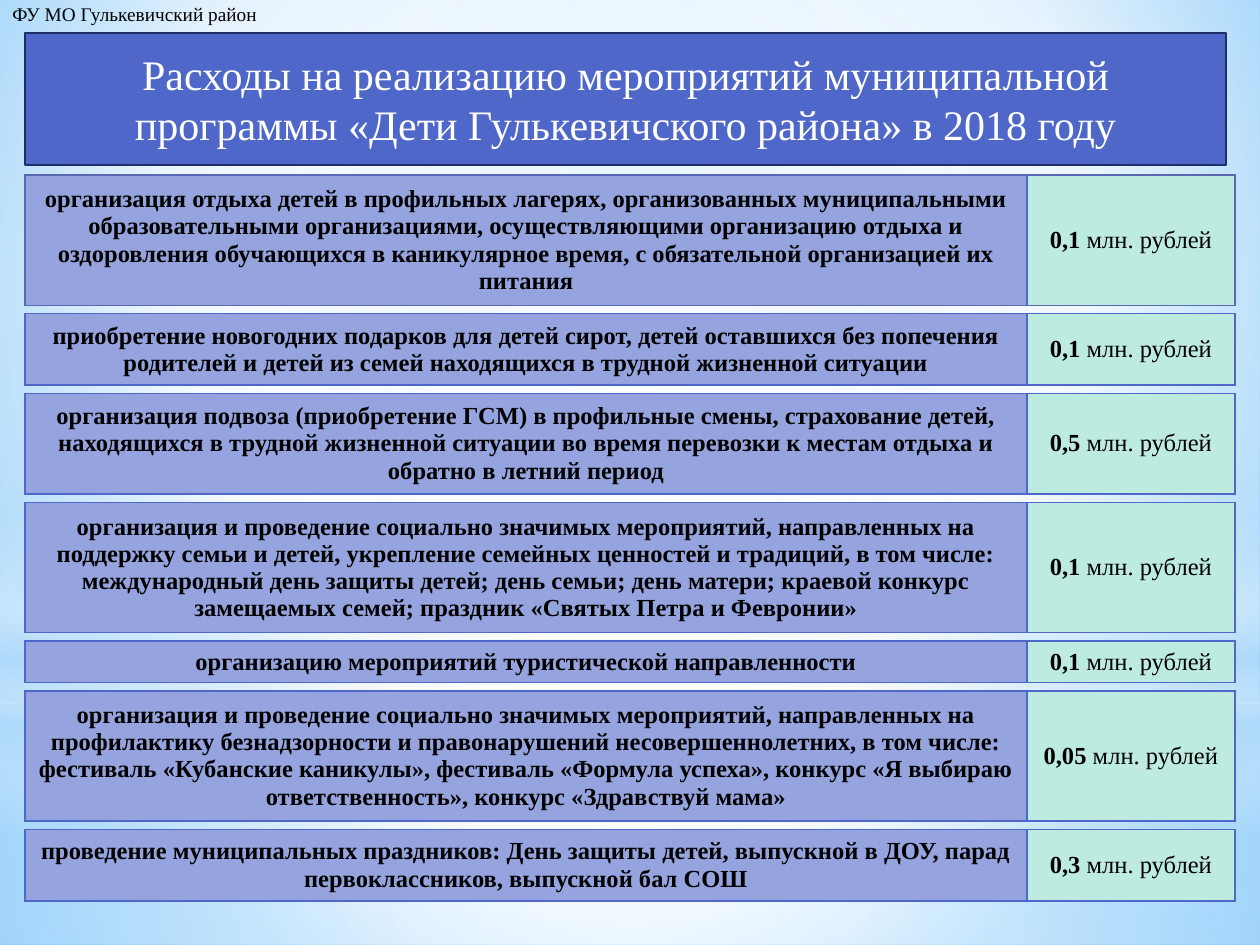
"""Build the slide on 2018 spending under the district's children programme."""
from dataclasses import dataclass
from typing import Any

from pptx import Presentation
from pptx.dml.color import RGBColor
from pptx.enum.shapes import MSO_SHAPE
from pptx.enum.text import MSO_ANCHOR, MSO_AUTO_SIZE, PP_ALIGN
from pptx.oxml import parse_xml
from pptx.oxml.ns import nsdecls, qn
from pptx.util import Inches, Pt


@dataclass(frozen=True)
class Theme:
    font: str = "Times New Roman"
    ink: str = "000000"
    white: str = "FFFFFF"
    blue: str = "4E67C8"
    navy: str = "1F2E69"
    slate: str = "5968B0"
    lavender: str = "95A4DE"
    mint: str = "BEEBDF"
    sky: str = "B4DCFA"
    label_pt: float = 11
    body_pt: float = 14
    title_pt: float = 24


@dataclass(frozen=True)
class Gradient:
    stops: tuple[tuple[int, str, int], ...]
    focus: tuple[int, int, int, int] | None = (50, 50, 50, 50)


@dataclass(frozen=True)
class Glow:
    kind: MSO_SHAPE
    top: float
    height: float
    gradient: Gradient


@dataclass(frozen=True)
class Expense:
    purpose: str
    amount: str
    lines: int
    edge: str = Theme.blue

    @property
    def height(self) -> float:
        return 0.1 + self.lines * T.body_pt * 1.2 / 72


T = Theme()
LEFT, TOP, BOTTOM = 0.2, 1.39, 7.15
COLS = (7.95, 1.65)
BACKDROP = Gradient(((0, "9ED5FF", 100), (60, T.white, 100), (100, "5BB9FF", 100)), (20, 10, 20, 60))
GLOWS = (
    Glow(MSO_SHAPE.RECTANGLE, 5.58, 1.92,
         Gradient(((0, T.white, 91), (37, T.white, 76), (100, T.sky, 79)))),
    Glow(MSO_SHAPE.RECTANGLE, 0, 5.58,
         Gradient(((0, T.white, 89), (48, T.white, 62), (100, T.sky, 79)))),
    Glow(MSO_SHAPE.RECTANGLE, 4.12, 2.5,
         Gradient(((0, T.white, 0), (29, T.white, 30), (45, T.sky, 40),
                   (55, T.white, 26), (65, T.sky, 60), (100, T.white, 0)), None)),
    Glow(MSO_SHAPE.OVAL, 1.75, 5.58, Gradient(((0, T.white, 100), (56, T.white, 0)))),
)
EXPENSES = (
    Expense("организация отдыха детей в профильных лагерях, организованных муниципальными "
            "образовательными организациями, осуществляющими организацию отдыха и оздоровления "
            "обучающихся в каникулярное время, с обязательной организацией их питания",
            "0,1", 4, T.slate),
    Expense("приобретение новогодних подарков для детей сирот, детей оставшихся без попечения "
            "родителей и детей из семей находящихся в трудной жизненной ситуации", "0,1", 2),
    Expense("организация подвоза (приобретение ГСМ) в профильные смены, страхование детей, "
            "находящихся в трудной жизненной ситуации во время перевозки к местам отдыха и "
            "обратно в летний период", "0,5", 3),
    Expense("организация и проведение социально значимых мероприятий, направленных на поддержку "
            "семьи и детей, укрепление семейных ценностей и традиций, в том числе: международный "
            "день защиты детей; день семьи; день матери; краевой конкурс замещаемых семей; "
            "праздник «Святых Петра и Февронии»", "0,1", 4),
    Expense("организацию мероприятий туристической направленности", "0,1", 1),
    Expense("организация и проведение социально значимых мероприятий, направленных на "
            "профилактику безнадзорности и правонарушений несовершеннолетних, в том числе: "
            "фестиваль «Кубанские каникулы», фестиваль «Формула успеха», конкурс «Я выбираю "
            "ответственность», конкурс «Здравствуй мама»", "0,05", 4),
    Expense("проведение муниципальных праздников: День защиты детей, выпускной в ДОУ, парад "
            "первоклассников, выпускной бал СОШ", "0,3", 2),
)


def set_attrs(obj: Any, values: dict[str, Any]) -> None:
    """Set each named attribute on the object."""
    for name, value in values.items():
        setattr(obj, name, value)


def set_gradient(pr: Any, g: Gradient) -> None:
    """Swap the solid fill of a property element for a gradient."""
    stops = "".join(
        f'<a:gs pos="{pos * 1000}"><a:srgbClr val="{color}"><a:alpha val="{alpha * 1000}"/>'
        f"</a:srgbClr></a:gs>" for pos, color, alpha in g.stops)
    shade = '<a:lin ang="5400000" scaled="0"/>'
    if g.focus:
        sides = " ".join(f'{k}="{v * 1000}"' for k, v in zip("ltrb", g.focus))
        shade = f'<a:path path="circle"><a:fillToRect {sides}/></a:path>'
    fill = parse_xml(f'<a:gradFill {nsdecls("a")} rotWithShape="1"><a:gsLst>{stops}</a:gsLst>'
                     f"{shade}</a:gradFill>")
    pr.replace(pr.find(qn("a:solidFill")), fill)


def add_glow(s: Any, glow: Glow) -> None:
    """Add a full-width translucent gradient shape."""
    sp = s.shapes.add_shape(glow.kind, 0, Inches(glow.top), Inches(10), Inches(glow.height))
    sp.shadow.inherit = False
    sp.fill.solid()
    set_gradient(sp._element.spPr, glow.gradient)
    sp.line.fill.background()


def write(p: Any, runs: tuple[tuple[str, bool], ...], size: float, color: str,
          align: PP_ALIGN = PP_ALIGN.CENTER) -> None:
    """Fill a paragraph with runs given as text and boldness."""
    p.alignment = align
    for text, bold in runs:
        r = p.add_run()
        r.text = text
        set_attrs(r.font, {"name": T.font, "size": Pt(size), "bold": bold})
        r.font.color.rgb = RGBColor.from_string(color)


def set_borders(cell: Any, colors: dict[str, str]) -> None:
    """Draw one-point borders in the given colour for each side."""
    tc_pr = cell._tc.get_or_add_tcPr()
    for i, side in enumerate("LRTB"):
        tc_pr.insert(i, parse_xml(
            f'<a:ln{side} {nsdecls("a")} w="12700"><a:solidFill><a:srgbClr val="{colors[side]}"/>'
            f"</a:solidFill></a:ln{side}>"))


def add_expense(s: Any, e: Expense, top: float) -> None:
    """Add a one-row table with a purpose and its amount."""
    tbl = s.shapes.add_table(1, 2, Inches(LEFT), Inches(top), Inches(sum(COLS)),
                             Inches(e.height)).table
    set_attrs(tbl, {"first_row": False, "horz_banding": False})
    cells = (
        (((e.purpose, True),), T.lavender, "R"),
        (((e.amount, True), (" млн. рублей", False)), T.mint, "L"),
    )
    for i, (runs, fill, inner) in enumerate(cells):
        tbl.columns[i].width = Inches(COLS[i])
        cell = tbl.cell(0, i)
        cell.vertical_anchor = MSO_ANCHOR.MIDDLE
        cell.fill.solid()
        cell.fill.fore_color.rgb = RGBColor.from_string(fill)
        set_borders(cell, {**dict.fromkeys("LRTB", e.edge), inner: T.blue})
        write(cell.text_frame.paragraphs[0], runs, T.body_pt, T.ink)


def format_title(s: Any, text: str) -> None:
    """Turn the title placeholder into a rounded banner above the glows."""
    sp = s.shapes.title
    s.shapes._spTree.append(sp._element)
    set_attrs(sp, {"left": Inches(LEFT), "top": Inches(0.26),
                   "width": Inches(9.53), "height": Inches(1.05)})
    sp._element.spPr.find(qn("a:xfrm")).addnext(parse_xml(
        f'<a:prstGeom {nsdecls("a")} prst="roundRect"><a:avLst/></a:prstGeom>'))
    sp.fill.solid()
    sp.fill.fore_color.rgb = RGBColor.from_string(T.blue)
    sp.line.color.rgb = RGBColor.from_string(T.navy)
    sp.line.width = Pt(1.25)
    tf = sp.text_frame
    set_attrs(tf, {"word_wrap": True, "auto_size": MSO_AUTO_SIZE.NONE,
                   "vertical_anchor": MSO_ANCHOR.MIDDLE})
    write(tf.paragraphs[0], ((text, False),), T.title_pt, T.white)


def add_label(s: Any, text: str) -> None:
    """Add the issuer's name in the top left corner."""
    tf = s.shapes.add_textbox(0, Inches(-0.03), Inches(2.18), Inches(0.29)).text_frame
    set_attrs(tf, {"word_wrap": False, "auto_size": MSO_AUTO_SIZE.SHAPE_TO_FIT_TEXT})
    write(tf.paragraphs[0], ((text, False),), T.label_pt, T.ink, PP_ALIGN.LEFT)


def main() -> None:
    """Assemble and save the slide."""
    prs = Presentation()
    set_attrs(prs, {"slide_width": Inches(10), "slide_height": Inches(7.5)})
    s = prs.slides.add_slide(prs.slide_layouts[5])
    s.background.fill.solid()
    set_gradient(s._element.find(f'.//{qn("p:bgPr")}'), BACKDROP)
    for glow in GLOWS:
        add_glow(s, glow)
    add_label(s, "ФУ МО Гулькевичский район")
    format_title(s, "Расходы на реализацию мероприятий муниципальной программы "
                    "«Дети Гулькевичского района» в 2018 году")
    gap = (BOTTOM - TOP - sum(e.height for e in EXPENSES)) / (len(EXPENSES) - 1)
    top = TOP
    for e in EXPENSES:
        add_expense(s, e, top)
        top += e.height + gap
    prs.save("out.pptx")


if __name__ == "__main__":
    main()
